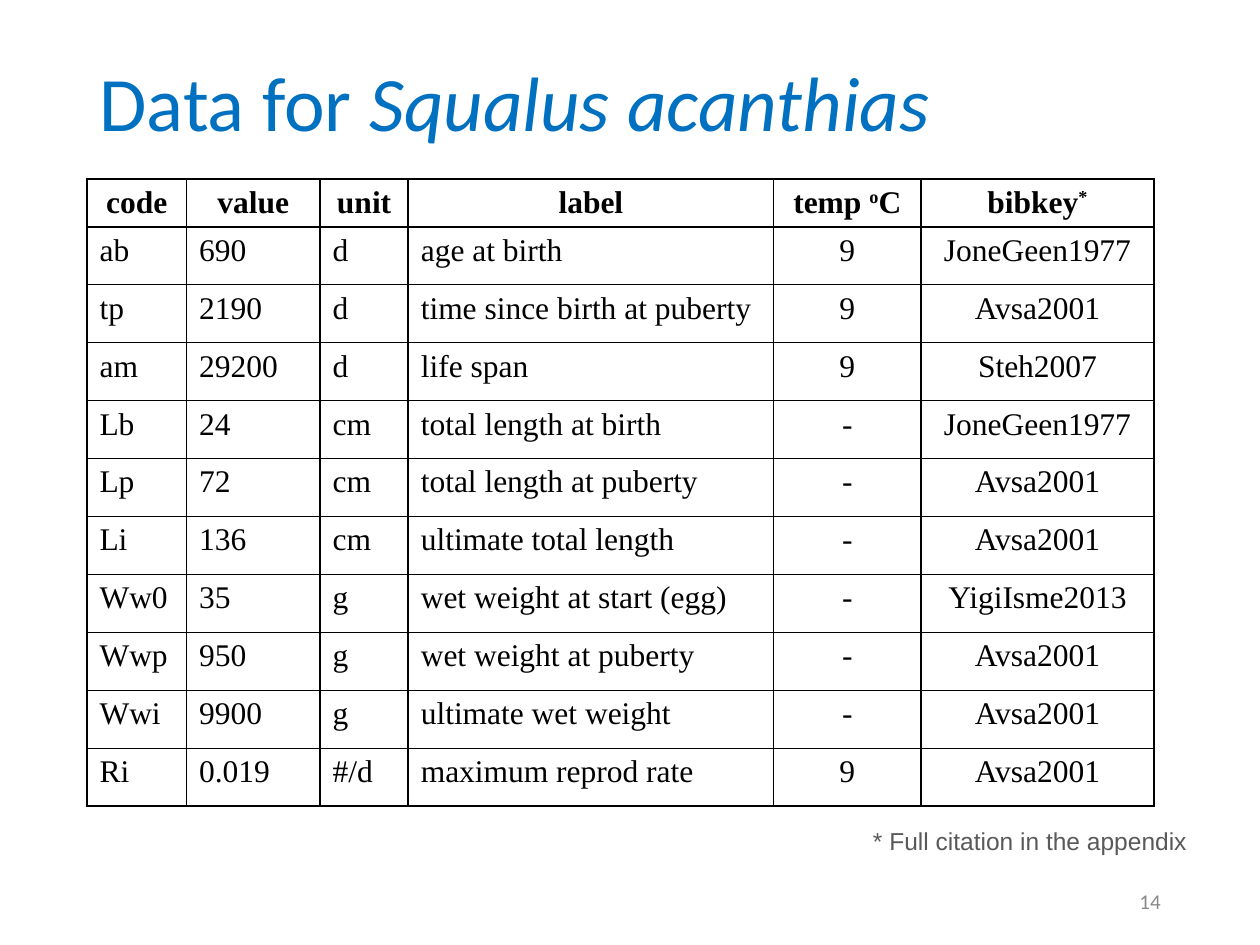
from pptx import Presentation
from pptx.dml.color import RGBColor
from pptx.enum.text import MSO_ANCHOR as Anchor, PP_ALIGN as Align
from pptx.oxml.ns import qn
from pptx.util import Inches, Pt
from lxml.etree import SubElement

WIDTH, HEIGHT = Inches(10), Inches(7.5)
BLUE = RGBColor(0x00, 0x70, 0xC0)
BLACK = RGBColor(0x00, 0x00, 0x00)
GREY = RGBColor(0x88, 0x88, 0x88)
DARK_GREY = RGBColor(0x59, 0x59, 0x59)

TITLE_FORMAT = {"name": "Calibri", "size": Pt(44)}
CELL_FORMAT = {"name": "Times New Roman", "size": Pt(18), "bold": False}
HEADER_FORMAT = {**CELL_FORMAT, "bold": True}
NOTE_FORMAT = {"name": "Arial", "size": Pt(14)}
NUMBER_FORMAT = {"name": "Calibri", "size": Pt(12)}

COLUMNS = [0.79, 1.06, 0.7, 2.9, 1.17, 1.85]
HEADER_ROW, DATA_ROW = 0.37, 0.46
CENTRED_FROM = 4
SUPERSCRIPT = "30000"

HEADERS = [
    [("code", False)],
    [("value", False)],
    [("unit", False)],
    [("label", False)],
    [("temp ", False), ("o", True), ("C", False)],
    [("bibkey", False), ("*", True)],
]
RECORDS = [
    ("ab", "690", "d", "age at birth", "9", "JoneGeen1977"),
    ("tp", "2190", "d", "time since birth at puberty", "9", "Avsa2001"),
    ("am", "29200", "d", "life span", "9", "Steh2007"),
    ("Lb", "24", "cm", "total length at birth", "-", "JoneGeen1977"),
    ("Lp", "72", "cm", "total length at puberty", "-", "Avsa2001"),
    ("Li", "136", "cm", "ultimate total length", "-", "Avsa2001"),
    ("Ww0", "35", "g", "wet weight at start (egg)", "-", "YigiIsme2013"),
    ("Wwp", "950", "g", "wet weight at puberty", "-", "Avsa2001"),
    ("Wwi", "9900", "g", "ultimate wet weight", "-", "Avsa2001"),
    ("Ri", "0.019", "#/d", "maximum reprod rate", "9", "Avsa2001"),
]


def share(left, top, width, height):
    return (int(WIDTH * left), int(HEIGHT * top),
            int(WIDTH * width), int(HEIGHT * height))


def add_span(para, text, formats, colour, raised=False):
    span = para.add_run()
    span.text = text
    for name, value in formats.items():
        setattr(span.font, name, value)
    span.font.color.rgb = colour
    if raised:
        span.font._element.set("baseline", SUPERSCRIPT)


def place_title(page, area):
    title = page.shapes.title
    title.left, title.top, title.width, title.height = area
    title.text_frame.vertical_anchor = Anchor.MIDDLE
    title.text_frame.word_wrap = True
    para = title.text_frame.paragraphs[0]
    para.alignment = Align.LEFT
    para.line_spacing = 0.9
    add_span(para, "Data for ", TITLE_FORMAT, BLUE)
    add_span(para, "Squalus acanthias", {**TITLE_FORMAT, "italic": True}, BLUE)


def add_borders(cell):
    properties = cell._tc.get_or_add_tcPr()
    for index, side in enumerate(("lnL", "lnR", "lnT", "lnB")):
        line = properties.makeelement(qn(f"a:{side}"), {"w": str(Pt(1))})
        fill = SubElement(line, qn("a:solidFill"))
        SubElement(fill, qn("a:srgbClr"), val=str(BLACK))
        properties.insert(index, line)


def place_table(page, area):
    rows = [HEADERS] + [[[(text, False)] for text in record]
                        for record in RECORDS]
    table = page.shapes.add_table(len(rows), len(COLUMNS), *area).table
    table.first_row = table.horz_banding = False
    for column, part in zip(table.columns, COLUMNS):
        column.width = int(area[2] * part / sum(COLUMNS))
    heights = [HEADER_ROW] + [DATA_ROW] * len(RECORDS)
    for row, part in zip(table.rows, heights):
        row.height = int(area[3] * part / sum(heights))
    for r, row in enumerate(rows):
        for c, parts in enumerate(row):
            cell = table.cell(r, c)
            cell.fill.background()
            add_borders(cell)
            if r == 0:
                cell.margin_bottom = Inches(0.03)
            para = cell.text_frame.paragraphs[0]
            centred = r == 0 or c >= CENTRED_FROM
            para.alignment = Align.CENTER if centred else Align.LEFT
            formats = CELL_FORMAT if r else HEADER_FORMAT
            for text, raised in parts:
                add_span(para, text, formats, BLACK, raised)


def place_text(page, area, text, formats, colour, align, anchor, wrap):
    box = page.shapes.add_textbox(*area)
    box.text_frame.word_wrap = wrap
    box.text_frame.vertical_anchor = anchor
    para = box.text_frame.paragraphs[0]
    para.alignment = align
    add_span(para, text, formats, colour)


def main():
    deck = Presentation()
    deck.slide_width, deck.slide_height = WIDTH, HEIGHT
    page = deck.slides.add_slide(deck.slide_layouts[5])
    place_title(page, share(0.069, 0.016, 0.862, 0.193))
    place_text(page, share(0.706, 0.927, 0.225, 0.053), "14",
               NUMBER_FORMAT, GREY, Align.RIGHT, Anchor.MIDDLE, True)
    place_table(page, share(0.069, 0.1893, 0.847, 0.6627))
    place_text(page, share(0.683, 0.867, 0.271, 0.045),
               "* Full citation in the appendix",
               NOTE_FORMAT, DARK_GREY, Align.LEFT, Anchor.TOP, False)
    deck.save("out.pptx")


if __name__ == "__main__":
    main()
